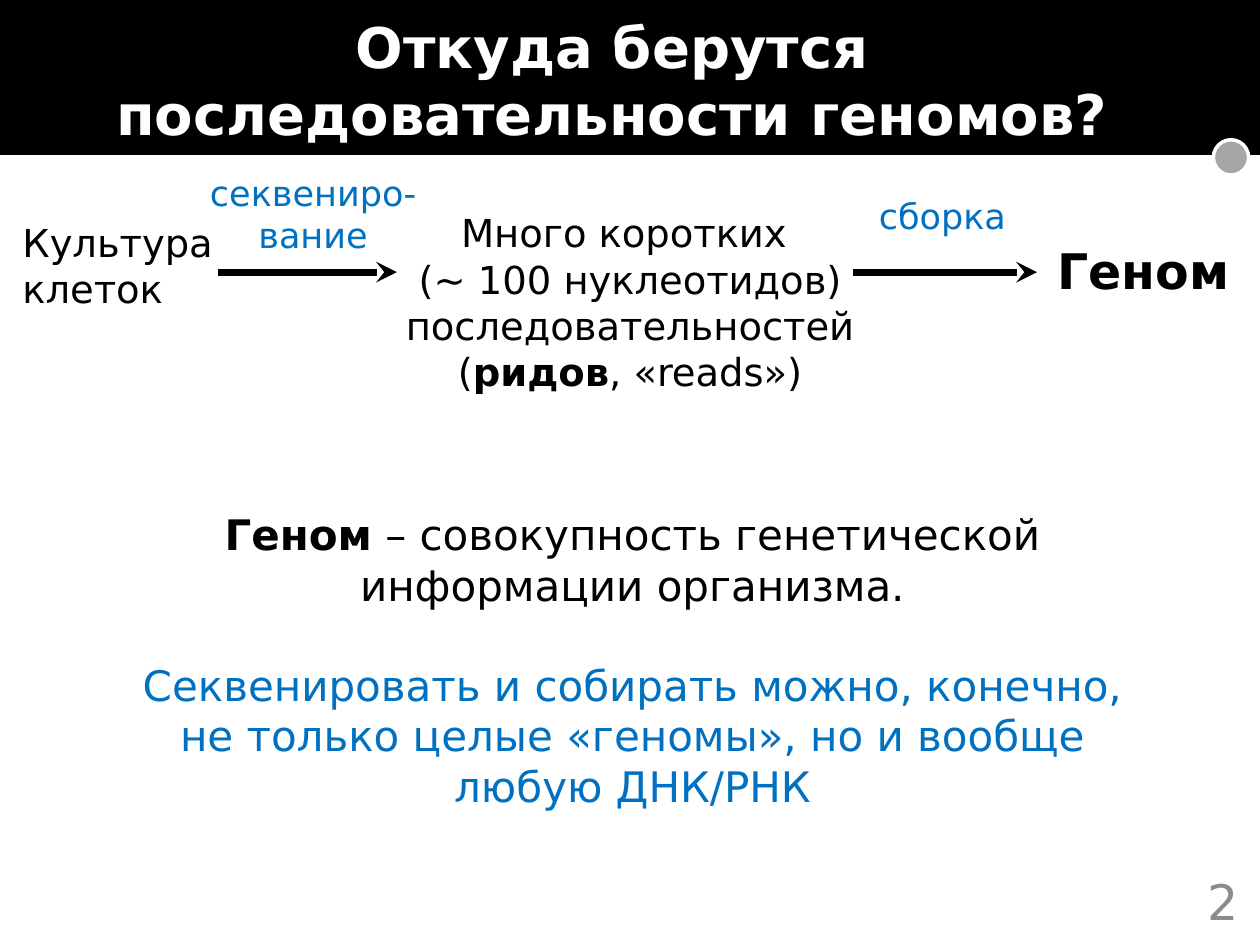
from dataclasses import dataclass

from lxml.etree import SubElement
from pptx import Presentation
from pptx.dml.color import RGBColor
from pptx.enum.shapes import MSO_CONNECTOR as Connector, MSO_SHAPE as Shape
from pptx.enum.text import MSO_ANCHOR as Anchor, MSO_AUTO_SIZE as AutoSize, PP_ALIGN as Align
from pptx.oxml.ns import qn
from pptx.util import Inches, Pt


@dataclass(frozen=True)
class Theme:
    font: str = "DejaVu Sans"
    black: str = "000000"
    white: str = "FFFFFF"
    accent: str = "0070C0"
    dot: str = "A6A6A6"
    number: str = "8C8C8C"
    title: int = 32
    large: int = 28
    body: int = 24
    stage: int = 22
    step: int = 20


@dataclass(frozen=True)
class Box:
    left: float
    top: float
    width: float
    height: float

    def share(self, left, top, width, height):
        return Box(self.left + left * self.width, self.top + top * self.height,
                   width * self.width, height * self.height)

    def emu(self):
        return [Inches(v) for v in (self.left, self.top, self.width, self.height)]


THEME = Theme()
PAGE = Box(0, 0, 10, 7.5)


def color(code):
    return RGBColor.from_string(code)


def write(slide, box, paragraphs, size, fill=THEME.black, align=Align.CENTER,
          anchor=Anchor.TOP, bold=False, before=0, holder=None):
    holder = holder or slide.shapes.add_textbox(*box.emu())
    holder.left, holder.top, holder.width, holder.height = box.emu()
    frame = holder.text_frame
    frame.word_wrap = True
    frame.auto_size = AutoSize.NONE
    frame.vertical_anchor = anchor
    for index, runs in enumerate(paragraphs):
        paragraph = frame.add_paragraph() if index else frame.paragraphs[0]
        paragraph.alignment = align
        paragraph.space_before = Pt(before if index else 0)
        for words, *style in runs:
            run = paragraph.add_run()
            run.text = words
            run.font.name = THEME.font
            run.font.size = Pt(size)
            run.font.bold = bold or "bold" in style
            run.font.color.rgb = color(THEME.accent if "accent" in style else fill)
    return frame


def line(slide, start, end, y, fill, width, arrow=False):
    connector = slide.shapes.add_connector(
        Connector.STRAIGHT, Inches(start), Inches(y), Inches(end), Inches(y))
    connector.line.color.rgb = color(fill)
    connector.line.width = Pt(width)
    properties = connector._element.spPr
    if arrow:
        SubElement(properties.find(qn("a:ln")), qn("a:tailEnd"), type="stealth")
    SubElement(properties, qn("a:effectLst"))


def shape(slide, kind, box, fill, outline=None):
    figure = slide.shapes.add_shape(kind, *box.emu())
    figure.shadow.inherit = False
    figure.fill.solid()
    figure.fill.fore_color.rgb = color(fill)
    if outline:
        figure.line.color.rgb = color(outline)
        figure.line.width = Pt(2)
    else:
        figure.line.fill.background()


def header(slide, box, heading):
    shape(slide, Shape.RECTANGLE, box, THEME.black)
    line(slide, box.left, box.left + 0.967 * box.width, box.top + 1.016 * box.height,
         THEME.white, 2)
    shape(slide, Shape.OVAL, box.share(0.963, 0.902, 0.028, 0.228), THEME.dot, THEME.white)
    title = slide.shapes.title
    slide.shapes._spTree.append(title._element)
    write(slide, box.share(0, 0.04, 0.972, 0.96), [[(heading,)]], THEME.title,
          fill=THEME.white, bold=True, holder=title)


def pipeline(slide, box):
    write(slide, box.share(0.008, 0.2, 0.205, 0.45), [[("Культура клеток",)]],
          THEME.stage, align=Align.LEFT)
    write(slide, box.share(0.299, 0.16, 0.402, 0.84), [
        [("Много коротких ",)],
        [("(~ 100 нуклеотидов) последовательностей",)],
        [("(",), ("ридов", "bold"), (", «reads»)",)],
    ], THEME.stage)
    write(slide, box.share(0.827, 0.29, 0.161, 0.3), [[("Геном",)]], THEME.large, bold=True)
    steps = [
        ("секвениро-вание", box.share(0.154, 0, 0.189, 0.41), 0.173, 0.315),
        ("сборка", box.share(0.673, 0.096, 0.15, 0.23), 0.677, 0.823),
    ]
    for label, place, start, end in steps:
        line(slide, box.left + start * box.width, box.left + end * box.width,
             box.top + 0.452 * box.height, THEME.black, 4, arrow=True)
        write(slide, place, [[(label,)]], THEME.step, fill=THEME.accent)


def definition(slide, box):
    write(slide, box, [
        [("Геном", "bold"), (" – совокупность генетической информации организма.",)],
        [("Секвенировать и собирать можно, конечно, не только целые «геномы», "
          "но и вообще любую ДНК/РНК", "accent")],
    ], THEME.body, before=THEME.body * 1.18)


def page_number(slide, box):
    frame = write(slide, box, [[("2",)]], THEME.large, fill=THEME.number,
                  align=Align.RIGHT, anchor=Anchor.MIDDLE)
    frame.word_wrap = True


def main():
    deck = Presentation()
    deck.slide_width, deck.slide_height = Inches(PAGE.width), Inches(PAGE.height)
    slide = deck.slides.add_slide(deck.slide_layouts[5])
    header(slide, PAGE.share(0, 0, 1, 0.164), "Откуда берутся последовательности геномов?")
    pipeline(slide, PAGE.share(0, 0.175, 1, 0.25))
    definition(slide, PAGE.share(0.091, 0.532, 0.822, 0.336))
    page_number(slide, PAGE.share(0.76, 0.927, 0.233, 0.053))
    deck.save("out.pptx")


if __name__ == "__main__":
    main()
